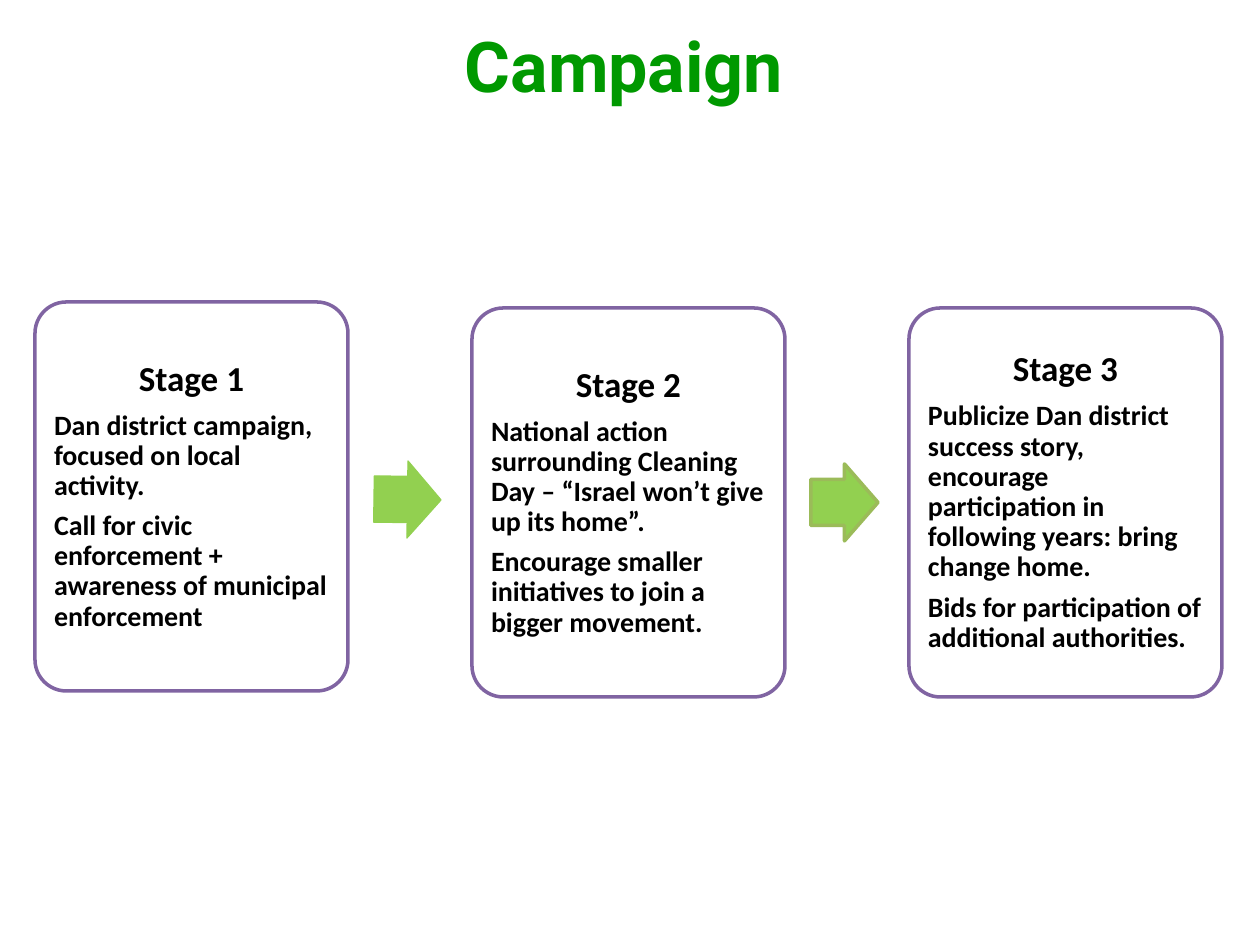
from pptx import Presentation
from pptx.dml.color import RGBColor
from pptx.enum.shapes import MSO_SHAPE
from pptx.enum.text import MSO_ANCHOR, PP_ALIGN
from pptx.util import Emu, Pt

ROUND_RECT = MSO_SHAPE.ROUNDED_RECTANGLE
RIGHT_ARROW = MSO_SHAPE.RIGHT_ARROW
TOP, MIDDLE = MSO_ANCHOR.TOP, MSO_ANCHOR.MIDDLE
LEFT, CENTER = PP_ALIGN.LEFT, PP_ALIGN.CENTER

WHITE = RGBColor(0xFF, 0xFF, 0xFF)
BLACK = RGBColor(0x00, 0x00, 0x00)
TITLE_GREEN = RGBColor(0x00, 0x99, 0x00)
PURPLE = RGBColor(0x80, 0x64, 0xA2)
LIME = RGBColor(0x92, 0xD0, 0x50)
OLIVE = RGBColor(0x9B, 0xBB, 0x59)

PX = 914400 // 126
CARD_W, CARD_H, CARD_PITCH = 313, 389, 437
CARD_LEFT = 35
ARROW_W, ARROW_H, ARROW_GAP = 67, 77, 26
TEXT_MARGIN = 9

# Card top, heading, body paragraphs
STAGES = [
    (302, "Stage 1", [
        "Dan district campaign, focused on local activity.",
        "Call for civic enforcement + awareness of municipal enforcement"]),
    (308, "Stage 2", [
        "National action surrounding Cleaning Day – “Israel won’t give up its home”.",
        "Encourage smaller initiatives to join a bigger movement."]),
    (308, "Stage 3", [
        "Publicize Dan district success story, encourage participation in "
        "following years: bring change home.",
        "Bids for participation of additional authorities."]),
]
# Top, line colour, line width, rotation
ARROWS = [(461, LIME, 0.75, 0.8), (464, OLIVE, 2, 0)]


def px(*lengths):
    return [Emu(n * PX) for n in lengths]


def add_shape(slide, kind, box, fill, line, width, adjustments):
    sp = slide.shapes.add_shape(kind, *px(*box))
    sp.shadow.inherit = False
    sp.fill.solid()
    sp.fill.fore_color.rgb = fill
    sp.line.color.rgb = line
    sp.line.width = Pt(width)
    for i, value in enumerate(adjustments):
        sp.adjustments[i] = value
    return sp


def add_text_box(slide, box, anchor, inset):
    tf = slide.shapes.add_textbox(*px(*box)).text_frame
    tf.word_wrap = True
    tf.vertical_anchor = anchor
    tf.margin_left, tf.margin_top, tf.margin_right, tf.margin_bottom = px(*[inset] * 4)
    return tf


def write(p, text, size, color=BLACK, font="Calibri", align=LEFT, spacing=None, after=0):
    p.alignment = align
    p.line_spacing = spacing
    p.space_after = Pt(after)
    r = p.add_run()
    r.text = text
    r.font.size = Pt(size)
    r.font.name = font
    r.font.bold = True
    r.font.color.rgb = color


def add_title(slide, box, text):
    tf = add_text_box(slide, box, TOP, 6)
    write(tf.paragraphs[0], text, 40, TITLE_GREEN, "Roboto", CENTER)


def add_stage(slide, box, heading, body):
    add_shape(slide, ROUND_RECT, box, WHITE, PURPLE, 2, [0.1])
    x, y, w, h = box
    inner = (x + TEXT_MARGIN, y + TEXT_MARGIN, w - 2 * TEXT_MARGIN, h - 2 * TEXT_MARGIN)
    tf = add_text_box(slide, inner, MIDDLE, 10)
    write(tf.paragraphs[0], heading, 20, align=CENTER, spacing=0.9, after=7)
    for text in body:
        write(tf.add_paragraph(), text, 16, spacing=0.9, after=5.6)


def add_arrow(slide, box, line, width, rotation):
    sp = add_shape(slide, RIGHT_ARROW, box, LIME, line, width, [0.6, 0.5])
    sp.rotation = rotation


def main():
    prs = Presentation()
    prs.slide_width, prs.slide_height = px(1260, 945)
    slide = prs.slides.add_slide(prs.slide_layouts[6])

    add_title(slide, (57, 16, 1134, 158), "Campaign")

    # Stages, left to right
    for i, (top, heading, body) in enumerate(STAGES):
        left = CARD_LEFT + i * CARD_PITCH
        add_stage(slide, (left, top, CARD_W, CARD_H), heading, body)

    # Arrows between stages
    for i, (top, line, width, rotation) in enumerate(ARROWS):
        left = CARD_LEFT + i * CARD_PITCH + CARD_W + ARROW_GAP
        add_arrow(slide, (left, top, ARROW_W, ARROW_H), line, width, rotation)

    prs.save("out.pptx")


if __name__ == "__main__":
    main()
